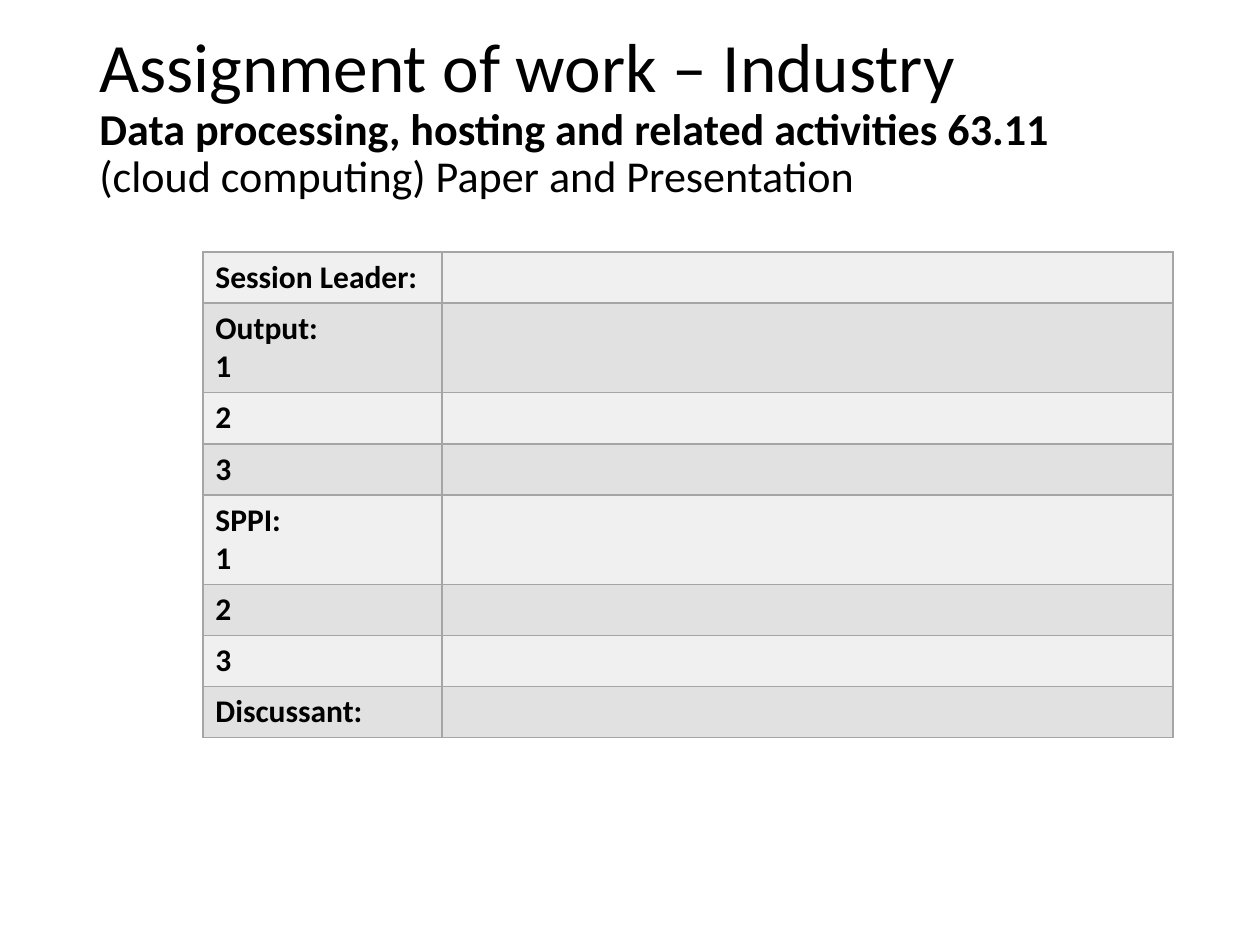
"""Build the work assignment slide for the cloud computing industry session."""
import lxml.etree
import pptx
import pptx.dml.color
import pptx.enum.text
import pptx.oxml.ns
import pptx.util

Pt = pptx.util.Pt
BLACK = pptx.dml.color.RGBColor(0x00, 0x00, 0x00)
BORDER_GREY = pptx.dml.color.RGBColor(0xA5, 0xA5, 0xA5)
LIGHT_GREY = pptx.dml.color.RGBColor(0xF0, 0xF0, 0xF0)
MID_GREY = pptx.dml.color.RGBColor(0xE1, 0xE1, 0xE1)
FONT_NAME = "Calibri"
LINE_HEIGHT = 22
CELL_PADDING = 7.2
COLUMN_WIDTHS = (136.8, 417.6)
ROW_LABELS = (
    ("Session Leader:",),
    ("Output:", "1"),
    ("2",),
    ("3",),
    ("SPPI:", "1"),
    ("2",),
    ("3",),
    ("Discussant:",),
)


def add_run(paragraph, text, size=18, bold=False):
    """Append formatted text to a paragraph."""
    run = paragraph.add_run()
    run.text = text
    run.font.name = FONT_NAME
    run.font.size = Pt(size)
    run.font.bold = bold
    run.font.color.rgb = BLACK


def add_title(slide):
    """Add the heading with its industry subtitle."""
    shape = slide.shapes.add_textbox(Pt(49.7), Pt(28.8), Pt(620.6), Pt(104.4))
    frame = shape.text_frame
    frame.word_wrap = True
    frame.vertical_anchor = pptx.enum.text.MSO_ANCHOR.MIDDLE
    frame.margin_bottom = Pt(31.3)
    paragraph = frame.paragraphs[0]
    paragraph.line_spacing = 0.9
    add_run(paragraph, "Assignment of work – Industry", size=39.6)
    paragraph.add_line_break()
    add_run(paragraph, "Data processing, hosting and related activities 63.11 ",
            size=25.2, bold=True)
    add_run(paragraph, "(cloud computing) Paper and Presentation", size=25.2)


def set_borders(cell):
    """Draw a thin grey line on every side of a cell."""
    qualify = pptx.oxml.ns.qn
    properties = cell._tc.get_or_add_tcPr()
    for index, side in enumerate(("a:lnL", "a:lnR", "a:lnT", "a:lnB")):
        line = lxml.etree.Element(qualify(side), w=str(Pt(1)))
        fill = lxml.etree.SubElement(line, qualify("a:solidFill"))
        lxml.etree.SubElement(fill, qualify("a:srgbClr"), val=str(BORDER_GREY))
        properties.insert(index, line)


def format_cell(cell, color):
    """Give a cell its fill and borders."""
    cell.fill.solid()
    cell.fill.fore_color.rgb = color
    set_borders(cell)


def write_label(cell, lines):
    """Write each line of a row label as a bold paragraph."""
    frame = cell.text_frame
    for index, text in enumerate(lines):
        paragraph = frame.add_paragraph() if index else frame.paragraphs[0]
        add_run(paragraph, text, bold=True)


def add_assignment_table(slide):
    """Add the table of roles with alternating row fills."""
    heights = [LINE_HEIGHT * len(lines) + CELL_PADDING for lines in ROW_LABELS]
    shape = slide.shapes.add_table(
        len(ROW_LABELS), len(COLUMN_WIDTHS), Pt(115.9), Pt(144),
        Pt(sum(COLUMN_WIDTHS)), Pt(sum(heights)))
    table = shape.table
    table.first_row = False
    table.horz_banding = False
    for column, width in zip(table.columns, COLUMN_WIDTHS):
        column.width = Pt(width)
    for index, (row, height) in enumerate(zip(table.rows, heights)):
        row.height = Pt(height)
        for cell in row.cells:
            format_cell(cell, MID_GREY if index % 2 else LIGHT_GREY)
        write_label(row.cells[0], ROW_LABELS[index])


def main():
    """Create the presentation and save it."""
    presentation = pptx.Presentation()
    presentation.slide_width = Pt(720)
    presentation.slide_height = Pt(540)
    slide = presentation.slides.add_slide(presentation.slide_layouts[6])
    add_title(slide)
    add_assignment_table(slide)
    presentation.save("out.pptx")


if __name__ == "__main__":
    main()
